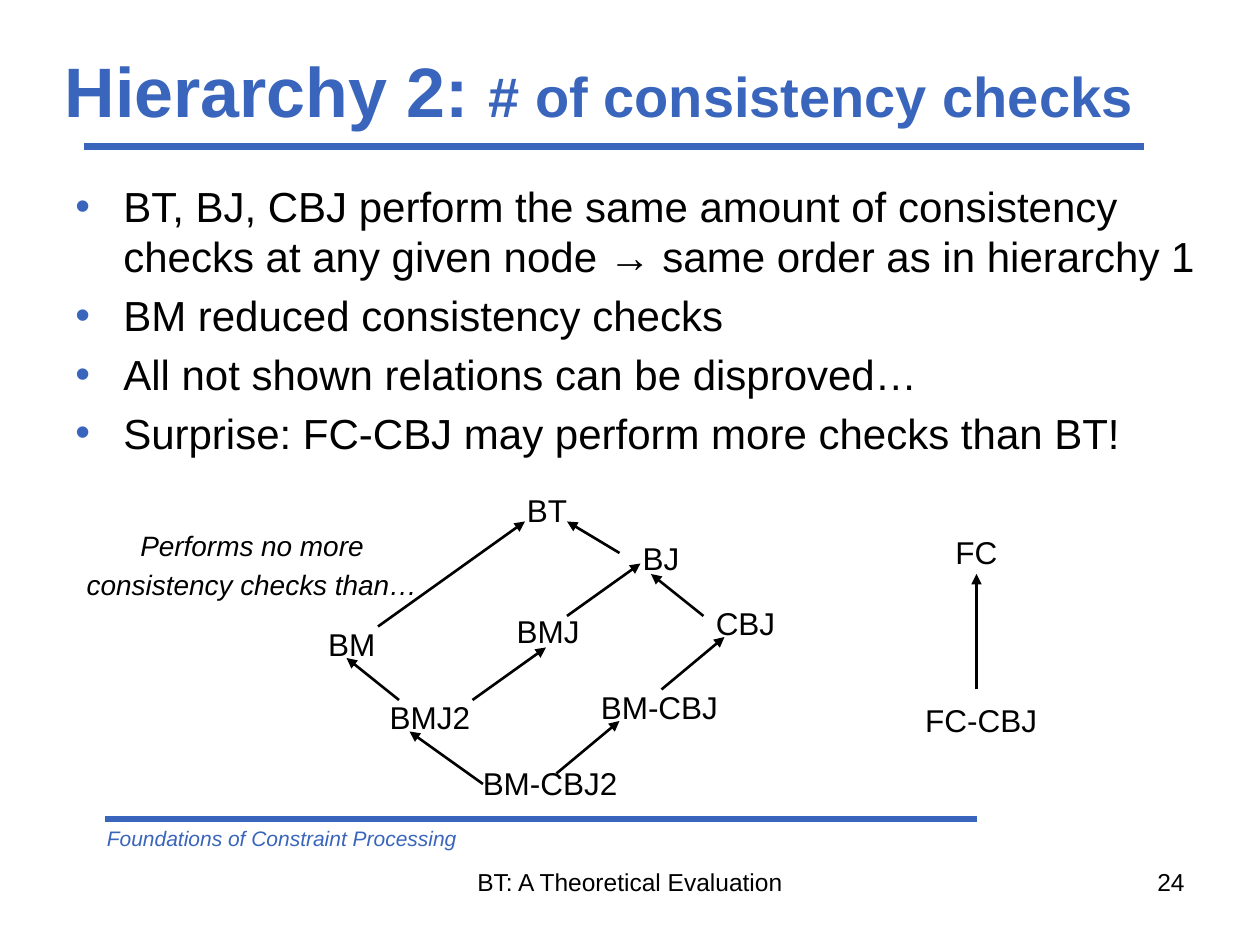
from typing import NamedTuple

import pptx
import pptx.dml.color
import pptx.enum.shapes
import pptx.enum.text
import pptx.oxml.ns
import pptx.util
from lxml import etree

BLUE = pptx.dml.color.RGBColor(0x3A, 0x65, 0xBC)
BLACK = pptx.dml.color.RGBColor(0, 0, 0)
FONT = "Arial"
ALIGN = pptx.enum.text.PP_ALIGN

# The slide is a grid of 120 columns by 90 rows, each cell 1/12 inch
CELL = pptx.util.Inches(1) / 12
COLUMNS, ROWS = 120, 90
ARROW_SHIFT = -1 / 3  # arrow ends sit a third of a row above the grid lines
NODE_HEIGHT = 4.8


class Area(NamedTuple):
    left: float
    top: float
    width: float
    height: float


class Style(NamedTuple):
    size: float
    color: pptx.dml.color.RGBColor = BLACK
    bold: bool = False
    italic: bool = False
    align: ALIGN = ALIGN.LEFT
    gap: float = 0


class Node(NamedTuple):
    name: str
    center: float
    middle: float
    width: float


class Arrow(NamedTuple):
    start: tuple[int, int]
    end: tuple[int, int]


NODES = [
    Node("BT", 52.1, 48.6, 6.5),
    Node("BMJ", 52.2, 60.1, 8.7),
    Node("BJ", 62.95, 53.1, 6.2),
    Node("CBJ", 71, 59.3, 8.5),
    Node("BM-CBJ", 62.8, 67.3, 14),
    Node("BMJ2", 40.95, 68.3, 10.4),
    Node("BM-CBJ2", 52.4, 74.6, 15.6),
    Node("BM", 33.5, 61.3, 7.3),
    Node("FC", 93, 52.6, 6.7),
    Node("FC-CBJ", 93.45, 68.6, 13.5),
]

ARROWS = [
    Arrow((36, 60), (50, 50)),  # BM to BT
    Arrow((45, 67), (52, 62)),  # BMJ2 to BMJ
    Arrow((54, 59), (61, 54)),  # BMJ to BJ
    Arrow((53, 74), (59, 69)),  # BM-CBJ2 to BM-CBJ
    Arrow((63, 66), (69, 61)),  # BM-CBJ to CBJ
    Arrow((46, 75), (39, 70)),  # BM-CBJ2 to BMJ2
    Arrow((38, 67), (33, 63)),  # BMJ2 to BM
    Arrow((67, 59), (62, 55)),  # CBJ to BJ
    Arrow((59, 53), (54, 50)),  # BJ to BT
    Arrow((93, 66), (93, 55)),  # FC-CBJ to FC
]

BULLETS = [
    "BT, BJ, CBJ perform the same amount of consistency checks "
    "at any given node → same order as in hierarchy 1",
    "BM reduced consistency checks",
    "All not shown relations can be disproved…",
    "Surprise: FC-CBJ may perform more checks than BT!",
]


def cells(count: float) -> int:
    return round(count * CELL)


def add_child(parent, tag: str, **attributes: str):
    return etree.SubElement(parent, pptx.oxml.ns.qn(tag), **attributes)


def add_bullet(para) -> None:
    properties = para._p.get_or_add_pPr()
    indent = pptx.util.Inches(0.38)
    properties.set("marL", str(indent))
    properties.set("indent", str(-indent))
    color = add_child(properties, "a:buClr")
    add_child(color, "a:srgbClr", val=str(BLUE))
    add_child(properties, "a:buFont", typeface=FONT)
    add_child(properties, "a:buChar", char="•")


def add_text(page, area: Area, lines: list[str], style: Style,
             wrap: bool = True, bullets: bool = False):
    box = page.shapes.add_textbox(*(cells(length) for length in area))
    frame = box.text_frame
    frame.word_wrap = wrap
    for index, line in enumerate(lines):
        para = frame.add_paragraph() if index else frame.paragraphs[0]
        if bullets:
            add_bullet(para)
        para.alignment = style.align
        para.space_before = pptx.util.Pt(style.gap if index else 0)
        para.add_run().text = line
        para.font.name = FONT
        para.font.size = pptx.util.Pt(style.size)
        para.font.bold = style.bold
        para.font.italic = style.italic
        para.font.color.rgb = style.color
    return frame


def add_line(page, start: tuple[float, float], end: tuple[float, float],
             color: pptx.dml.color.RGBColor, width: float, arrowhead: bool = False) -> None:
    line = page.shapes.add_connector(
        pptx.enum.shapes.MSO_CONNECTOR.STRAIGHT,
        *(cells(length) for length in (*start, *end)))
    line.line.color.rgb = color
    line.line.width = pptx.util.Pt(width)
    if arrowhead:
        add_child(line.get_or_add_ln(), "a:tailEnd", type="triangle")
    add_child(line._element.spPr, "a:effectLst")


def add_frame(page) -> None:
    # Rules and footer
    add_line(page, (8, 14), (109, 14), BLUE, 4)
    add_line(page, (10, 78), (93, 78), BLUE, 4)
    add_text(page, Area(9, 78, 63, 3.6), ["Foundations of Constraint Processing"],
             Style(12, BLUE, italic=True))
    add_text(page, Area(41, 82, 38, 6.2), ["BT: A Theoretical Evaluation"],
             Style(14, align=ALIGN.CENTER))
    add_text(page, Area(86, 82, 28, 6.2), ["24"], Style(14, align=ALIGN.RIGHT))


def add_title(page) -> None:
    frame = add_text(page, Area(5, 4, 108, 9), ["Hierarchy 2: "], Style(40, BLUE, bold=True))
    frame.vertical_anchor = pptx.enum.text.MSO_ANCHOR.MIDDLE
    span = frame.paragraphs[0].add_run()
    span.text = "# of consistency checks"
    span.font.size = pptx.util.Pt(32)


def add_hierarchy(page) -> None:
    for node in NODES:
        area = Area(node.center - node.width / 2, node.middle - NODE_HEIGHT / 2,
                    node.width, NODE_HEIGHT)
        add_text(page, area, [node.name], Style(18, align=ALIGN.CENTER), wrap=False)
    for arrow in ARROWS:
        start, end = ((column, row + ARROW_SHIFT) for column, row in arrow)
        add_line(page, start, end, BLACK, 1.5, arrowhead=True)
    # Meaning of the arrows
    add_text(page, Area(7, 49.7, 34, 8.3), ["Performs no more", "consistency checks than…"],
             Style(16, italic=True, align=ALIGN.CENTER, gap=3.5), wrap=False)


def main() -> None:
    deck = pptx.Presentation()
    deck.slide_width, deck.slide_height = cells(COLUMNS), cells(ROWS)
    page = deck.slides.add_slide(deck.slide_layouts[6])
    add_frame(page)
    add_title(page)
    add_text(page, Area(6, 16.6, 112, 59.4), BULLETS, Style(24, gap=4.8), bullets=True)
    add_hierarchy(page)
    deck.save("out.pptx")


if __name__ == "__main__":
    main()
